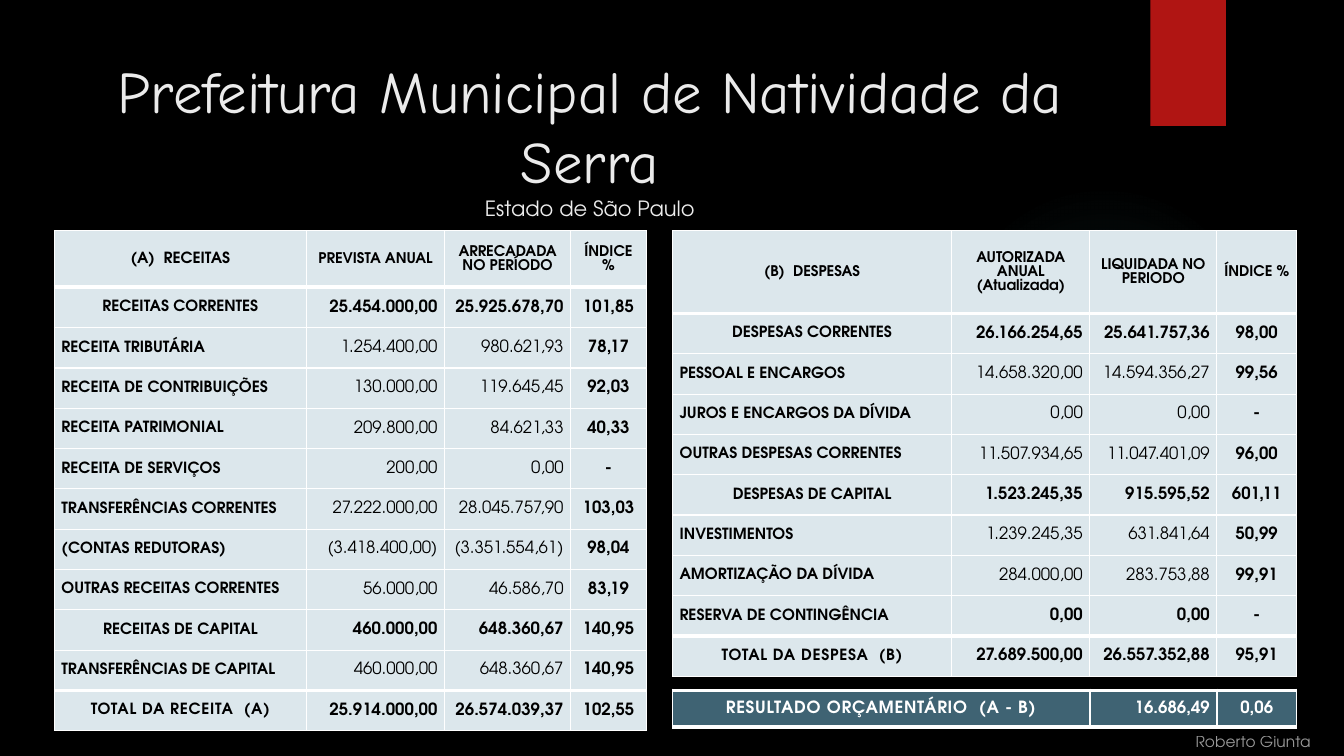
from lxml import etree
from pptx import Presentation
from pptx.dml.color import RGBColor
from pptx.enum.shapes import MSO_SHAPE
from pptx.enum.text import MSO_ANCHOR, PP_ALIGN
from pptx.oxml import parse_xml
from pptx.oxml.ns import nsdecls, qn
from pptx.util import Inches, Pt

LEFT, CENTER, RIGHT = PP_ALIGN.LEFT, PP_ALIGN.CENTER, PP_ALIGN.RIGHT
TOP, MIDDLE, BOTTOM = MSO_ANCHOR.TOP, MSO_ANCHOR.MIDDLE, MSO_ANCHOR.BOTTOM
RECTANGLE, OVAL = MSO_SHAPE.RECTANGLE, MSO_SHAPE.OVAL

BLACK = RGBColor(0x00, 0x00, 0x00)
WHITE = RGBColor(0xFF, 0xFF, 0xFF)
TITLE_GRAY = RGBColor(0xEB, 0xEB, 0xEB)
RED = RGBColor(0xB0, 0x15, 0x13)
TEAL = RGBColor(0x50, 0xB9, 0xC1)
PALE_BLUE = RGBColor(0xDC, 0xE7, 0xEC)
SLATE = RGBColor(0x3F, 0x63, 0x73)
BODY_FONT, TITLE_FONT = "TeX Gyre Adventor", "Comic Neue"

TITLE = [
    ("Prefeitura Municipal de Natividade da Serra",
     {"size": Pt(42), "name": TITLE_FONT}),
    ("Estado de São Paulo", {"size": Pt(15), "name": BODY_FONT}),
]
AUTHOR = "Roberto Giunta"

REVENUE = [
    ("header", "(A)  RECEITAS", "PREVISTA ANUAL", "ARRECADADA NO PERÍODO", "ÍNDICE %"),
    ("group", "RECEITAS CORRENTES", "25.454.000,00", "25.925.678,70", "101,85"),
    ("detail", "RECEITA TRIBUTÁRIA", "1.254.400,00", "980.621,93", "78,17"),
    ("detail", "RECEITA DE CONTRIBUIÇÕES", "130.000,00", "119.645,45", "92,03"),
    ("detail", "RECEITA PATRIMONIAL", "209.800,00", "84.621,33", "40,33"),
    ("detail", "RECEITA DE SERVIÇOS", "200,00", "0,00", "-"),
    ("detail", "TRANSFERÊNCIAS CORRENTES", "27.222.000,00", "28.045.757,90", "103,03"),
    ("detail", "(CONTAS REDUTORAS)", "(3.418.400,00)", "(3.351.554,61)", "98,04"),
    ("detail", "OUTRAS RECEITAS CORRENTES", "56.000,00", "46.586,70", "83,19"),
    ("group", "RECEITAS DE CAPITAL", "460.000,00", "648.360,67", "140,95"),
    ("detail", "TRANSFERÊNCIAS DE CAPITAL", "460.000,00", "648.360,67", "140,95"),
    ("total", "TOTAL DA RECEITA  (A)", "25.914.000,00", "26.574.039,37", "102,55"),
]
EXPENSE = [
    ("header", "(B)  DESPESAS", "AUTORIZADA\nANUAL (Atualizada)", "LIQUIDADA NO PERIODO",
     "ÍNDICE %"),
    ("group", "DESPESAS CORRENTES", "26.166.254,65", "25.641.757,36", "98,00"),
    ("detail", "PESSOAL E ENCARGOS", "14.658.320,00", "14.594.356,27", "99,56"),
    ("detail", "JUROS E ENCARGOS DA DÍVIDA", "0,00", "0,00", "-"),
    ("detail", "OUTRAS DESPESAS CORRENTES", "11.507.934,65", "11.047.401,09", "96,00"),
    ("group", "DESPESAS DE CAPITAL", "1.523.245,35", "915.595,52", "601,11"),
    ("detail", "INVESTIMENTOS", "1.239.245,35", "631.841,64", "50,99"),
    ("detail", "AMORTIZAÇÃO DA DÍVIDA", "284.000,00", "283.753,88", "99,91"),
    ("reserve", "RESERVA DE CONTINGÊNCIA", "0,00", "0,00", "-"),
    ("total", "TOTAL DA DESPESA  (B)", "27.689.500,00", "26.557.352,88", "95,91"),
]
RESULT = [("result", "RESULTADO ORÇAMENTÁRIO  (A - B)", "16.686,49", "0,06")]

TABLES = [
    {"rows": REVENUE, "at": (0.54, 2.29), "columns": (2.5, 1.37, 1.25, 0.75),
     "first_height": 0.56, "header_size": 11},
    {"rows": EXPENSE, "at": (6.67, 2.29), "columns": (2.77, 1.37, 1.26, 0.79),
     "first_height": 0.82, "header_size": 10.5},
    {"rows": RESULT, "at": (6.67, 6.85), "columns": (4.14, 1.26, 0.79),
     "first_height": 0.36, "header_size": 12},
]
ROW_HEIGHT = 0.4
THICK_TOP = ("total", "result")
THICK_BOTTOM = ("header", "result")


def set_format(target, values):
    for name, value in values.items():
        setattr(target, name, value)


def write(frame, lines, align, line_spacing=None):
    frame.word_wrap = True
    for index, (text, values) in enumerate(lines):
        paragraph = frame.paragraphs[0] if index == 0 else frame.add_paragraph()
        set_format(paragraph, {"alignment": align, "line_spacing": line_spacing})
        run = paragraph.add_run()
        run.text = text
        color = values.get("color", TITLE_GRAY)
        set_format(run.font, {k: v for k, v in values.items() if k not in ("color", "spacing")})
        run.font.color.rgb = color
        if "spacing" in values:
            run.font._element.set("spc", values["spacing"])


def add_text(slide, box, lines, align, anchor):
    shape = slide.shapes.add_textbox(*map(Inches, box))
    shape.text_frame.vertical_anchor = anchor
    write(shape.text_frame, lines, align)
    return shape


def add_decoration(slide, kind, box, color):
    shape = slide.shapes.add_shape(kind, *map(Inches, box))
    shape.shadow.inherit = False
    shape.fill.solid()
    shape.fill.fore_color.rgb = color
    shape.line.fill.background()
    return shape


def set_borders(cell, widths):
    properties = cell._tc.get_or_add_tcPr()
    for side, width in zip("LRTB", widths):
        properties.append(parse_xml(
            f'<a:ln{side} {nsdecls("a")} w="{Pt(width)}"><a:solidFill>'
            f'<a:srgbClr val="{WHITE}"/></a:solidFill></a:ln{side}>'))


def cell_style(kind, column, last, header_size):
    if kind == "header":
        size, align = (header_size if column == 0 else 10.5), CENTER
    elif column == 0:
        size = 12 if kind == "result" else 11
        align = LEFT if kind in ("detail", "reserve") else CENTER
    else:
        size, align = 12, CENTER if column == last else RIGHT
    values = {"size": Pt(size), "name": BODY_FONT,
              "bold": kind != "detail" or column in (0, last),
              "color": WHITE if kind == "result" else BLACK}
    if kind in ("total", "result") and column == 0:
        values["spacing"] = "50"
    return align, values


def add_budget_table(slide, rows, at, columns, first_height, header_size):
    heights = [first_height] + [ROW_HEIGHT] * (len(rows) - 1)
    box = (*at, sum(columns), sum(heights))
    table = slide.shapes.add_table(len(rows), len(columns), *map(Inches, box)).table
    set_format(table, {"first_row": False, "horz_banding": False})
    for column, width in zip(table.columns, columns):
        column.width = Inches(width)
    kinds = [row[0] for row in rows]
    last = len(columns) - 1
    for r, (kind, *texts) in enumerate(rows):
        table.rows[r].height = Inches(heights[r])
        above = kinds[r - 1] if r else ""
        below = kinds[r + 1] if r < len(rows) - 1 else ""
        top = 3 if kind in THICK_TOP or above in THICK_BOTTOM else 1
        bottom = 3 if kind in THICK_BOTTOM or below in THICK_TOP else 1
        for c, text in enumerate(texts):
            cell = table.cell(r, c)
            set_format(cell, {"vertical_anchor": MIDDLE, "margin_top": 0, "margin_bottom": 0,
                              "margin_left": Inches(0.07), "margin_right": Inches(0.07)})
            set_borders(cell, (1, 1, top, bottom))
            cell.fill.solid()
            cell.fill.fore_color.rgb = SLATE if kind == "result" else PALE_BLUE
            align, values = cell_style(kind, c, last, header_size)
            lines = [(line, values) for line in text.split("\n")]
            write(cell.text_frame, lines, align, Pt(9.8) if kind == "header" else None)


def main():
    presentation = Presentation()
    presentation.slide_width, presentation.slide_height = Inches(13.33), Inches(7.5)
    slide = presentation.slides.add_slide(presentation.slide_layouts[6])
    slide.background.fill.solid()
    slide.background.fill.fore_color.rgb = BLACK

    glow = add_decoration(slide, OVAL, (9.41, 1.83, 3.08, 3.08), TEAL)
    stops = "".join(
        f'<a:gs pos="{position}000"><a:srgbClr val="{TEAL}"><a:alpha val="{alpha}000"/>'
        '</a:srgbClr></a:gs>' for position, alpha in ((0, 7), (36, 6), (69, 0), (100, 0)))
    gradient = parse_xml(
        f'<a:gradFill {nsdecls("a")}><a:gsLst>{stops}</a:gsLst><a:path path="circle">'
        '<a:fillToRect l="50000" t="50000" r="50000" b="50000"/></a:path></a:gradFill>')
    solid = glow._element.spPr.find(qn("a:solidFill"))
    solid.getparent().replace(solid, gradient)
    add_decoration(slide, RECTANGLE, (11.41, 0, 0.75, 1.25), RED)

    for table in TABLES:
        add_budget_table(slide, **table)

    author_style = {"size": Pt(11), "name": BODY_FONT, "color": WHITE}
    author = add_text(slide, (8.88, 7.17, 4.22, 0.33), [(AUTHOR, author_style)], RIGHT, BOTTOM)
    color = next(author._element.iter(qn("a:srgbClr")))
    etree.SubElement(color, qn("a:alpha")).set("val", "60000")
    add_text(slide, (0.71, 0.49, 10.28, 1.53), TITLE, CENTER, TOP)
    presentation.save("out.pptx")


if __name__ == "__main__":
    main()
